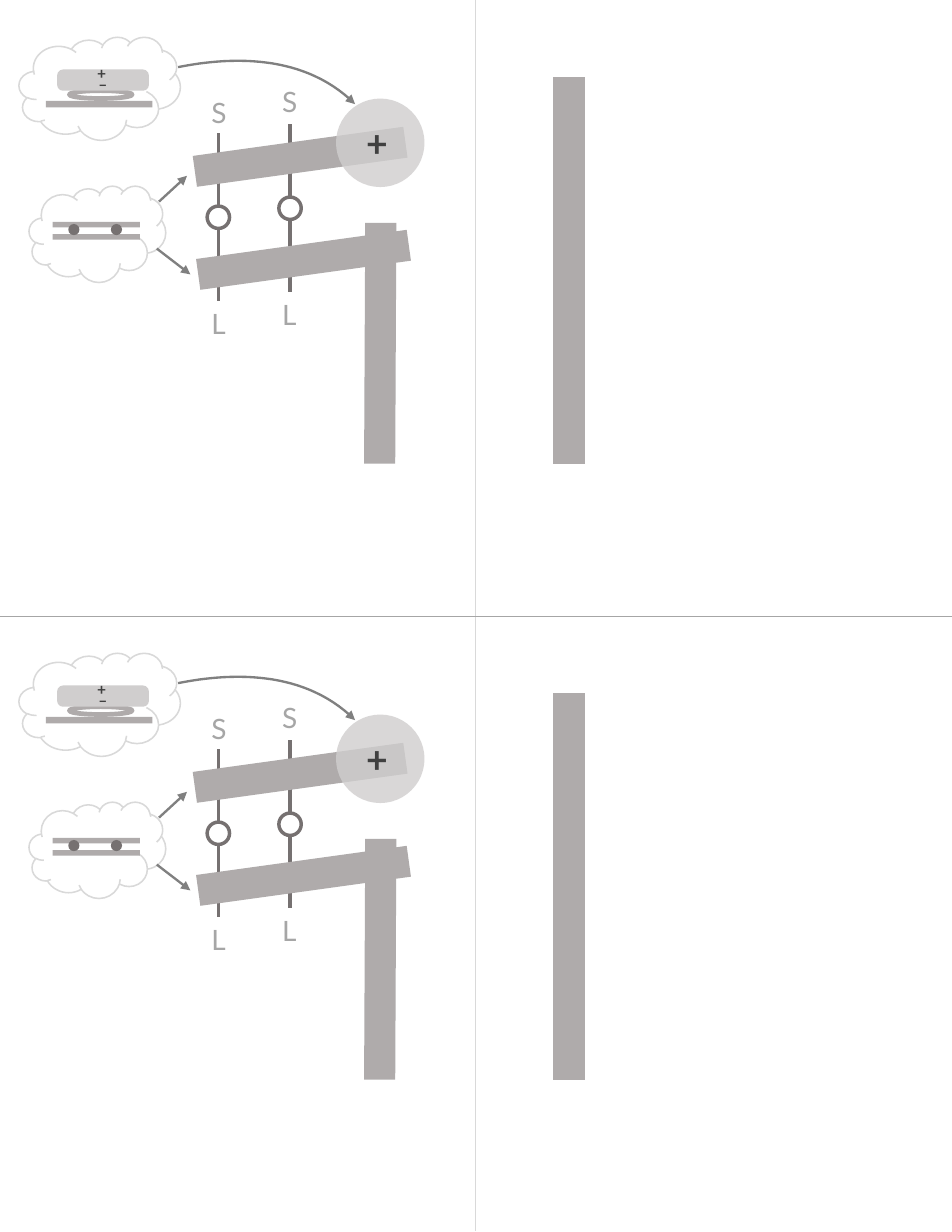
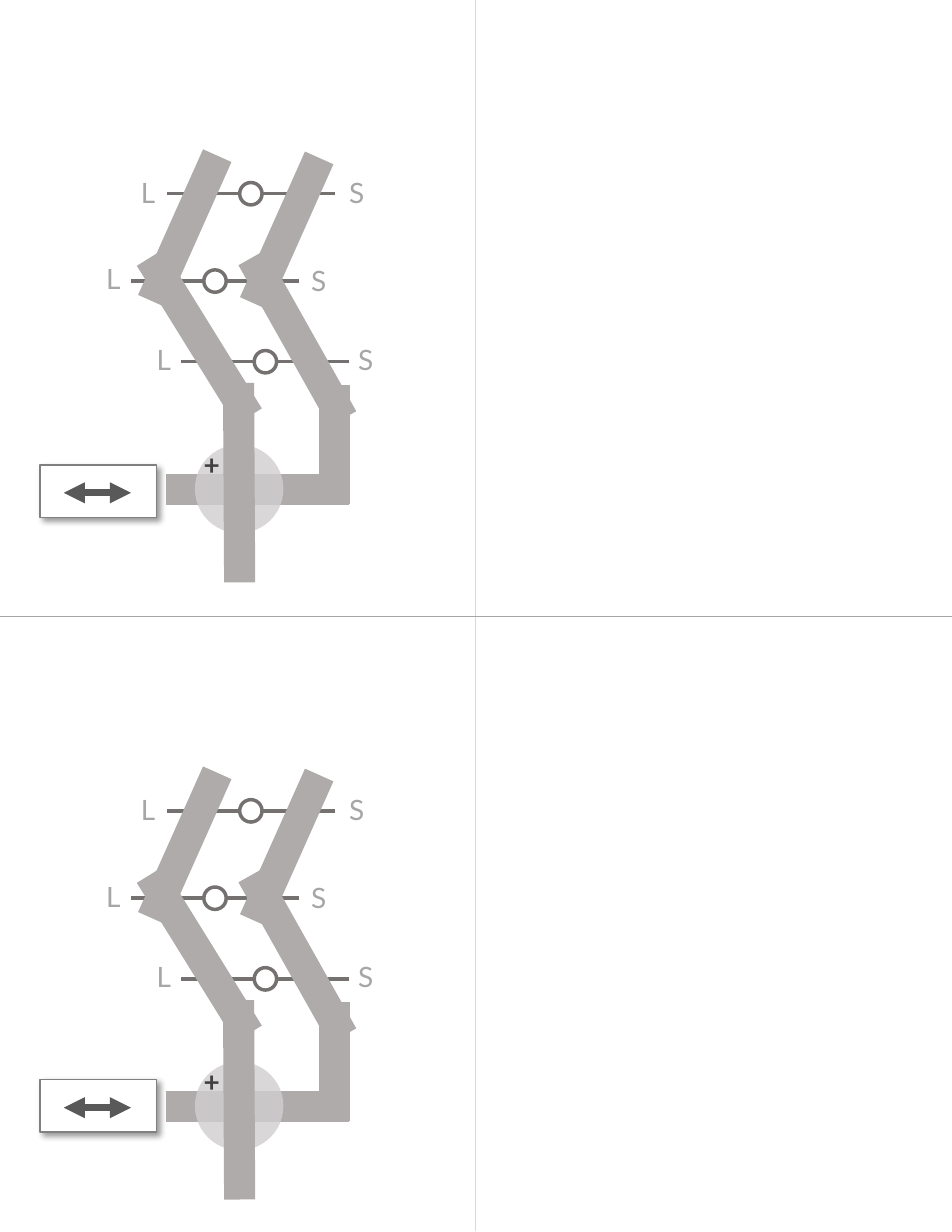
from lxml.etree import SubElement
from pptx import Presentation
from pptx.dml.color import RGBColor
from pptx.enum.shapes import MSO_CONNECTOR as Connector, MSO_SHAPE as Shape
from pptx.enum.text import MSO_AUTO_SIZE as AutoSize
from pptx.oxml.ns import qn
from pptx.util import Inches, Pt

COLORS = {
    "white": "FFFFFF", "black": "000000", "limb": "AFABAB", "joint": "D0CECE",
    "band": "767171", "outline": "D9D9D9", "label": "A6A6A6",
    "arrow": "808080", "sign": "404040", "motion": "595959",
}
FONT = "Lato"
LINE = Connector.STRAIGHT
LIMB = {"line": "limb", "width": 20}
BAND = {"line": "band", "width": 2.25}
JOINT_SIZE, RING_SIZE, PANEL_HEIGHT = 0.79, 0.2, 5.5


def draw(page, kind, at, drop=0, fill=None, opacity=100, line=None, width=1,
         arrows=(), shadow=False):
    """Draw a preset shape, a connector, or an open path if kind is None."""
    if kind is None:
        points = [(Inches(x), Inches(y + drop)) for x, y in at]
        builder = page.shapes.build_freeform(*points[0], scale=1.0)
        builder.add_line_segments(points[1:], close=False)
        item = builder.convert_to_shape()
    elif kind is LINE:
        x1, y1, x2, y2 = at
        item = page.shapes.add_connector(
            kind, Inches(x1), Inches(y1 + drop), Inches(x2), Inches(y2 + drop))
    else:
        left, top, wide, high = at
        item = page.shapes.add_shape(
            kind, Inches(left), Inches(top + drop), Inches(wide), Inches(high))
    properties = item._element.spPr

    if kind is not LINE:
        if fill:
            item.fill.solid()
            item.fill.fore_color.rgb = RGBColor.from_string(COLORS[fill])
            if opacity < 100:
                color = properties.find(qn("a:solidFill"))[0]
                SubElement(color, qn("a:alpha"), val=str(opacity * 1000))
        else:
            item.fill.background()

    if line:
        item.line.color.rgb = RGBColor.from_string(COLORS[line])
        item.line.width = Pt(width)
        for end in arrows:
            SubElement(item.line._get_or_add_ln(), qn(f"a:{end}"), type="triangle")
    else:
        item.line.fill.background()

    effects = SubElement(properties, qn("a:effectLst"))
    if shadow:
        outer = SubElement(effects, qn("a:outerShdw"), blurRad=str(Pt(4)),
                           dist=str(Pt(3)), dir=str(45 * 60000),
                           algn="tl", rotWithShape="0")
        color = SubElement(outer, qn("a:srgbClr"), val=COLORS["black"])
        SubElement(color, qn("a:alpha"), val="40000")
    return item


def write_text(page, text, left, top, width=0.34, height=0.4, size=18,
               color="label", bold=False):
    box = page.shapes.add_textbox(
        Inches(left), Inches(top), Inches(width), Inches(height))
    box.text_frame.word_wrap = False
    box.text_frame.auto_size = AutoSize.SHAPE_TO_FIT_TEXT
    span = box.text_frame.paragraphs[0].add_run()
    span.text = text
    span.font.name = FONT
    span.font.size = Pt(size)
    span.font.bold = bold
    span.font.color.rgb = RGBColor.from_string(COLORS[color])


deck = Presentation()
deck.slide_width, deck.slide_height = Inches(8.5), Inches(11)
arm_page, leg_page = [deck.slides.add_slide(deck.slide_layouts[6]) for _ in range(2)]

# Four-panel grid shared by both slides
for page in (arm_page, leg_page):
    grid = page.shapes.add_table(2, 2, 0, 0, Inches(8.49), Inches(11)).table
    grid.first_row = grid.horz_banding = False
    for row in range(2):
        grid.rows[row].height = Inches(PANEL_HEIGHT)
        for column in range(2):
            cell = grid.cell(row, column)
            borders = [("lnL" if column else "lnR", "outline", 0.25),
                       ("lnT" if row else "lnB", "label", 0.5)]
            for side, color, width in borders:
                edge = SubElement(cell._tc.get_or_add_tcPr(), qn(f"a:{side}"),
                                  w=str(Pt(width)))
                ink = SubElement(edge, qn("a:solidFill"))
                SubElement(ink, qn("a:srgbClr"), val=COLORS[color])
            cell.fill.background()

# Slide 1: the arm, once in each row
for drop in (0, PANEL_HEIGHT):
    page = arm_page
    draw(page, Shape.CLOUD, (0.26, 1.66, 1.22, 0.86), drop, fill="white", line="outline")

    # Bands with a ring at the middle
    for x, top in ((1.95, 1.19), (2.59, 1.11)):
        draw(page, LINE, (x, top, x, top + 1.5), drop, **BAND)
        draw(page, Shape.OVAL, (x - 0.1, top + 0.65, RING_SIZE, RING_SIZE), drop,
             fill="white", **BAND)

    # Limbs and joint
    for limb in ((3.4, 1.99, 3.39, 4.14), (1.74, 1.53, 3.62, 1.27)):
        draw(page, LINE, limb, drop, **LIMB)
    draw(page, Shape.OVAL, (3, 0.88, JOINT_SIZE, JOINT_SIZE), drop,
         fill="joint", opacity=80)
    write_text(page, "+", 3.17, 1.02 + drop, 0.44, 0.5, size=24, color="sign", bold=True)
    for limb in ((1.77, 2.45, 3.65, 2.19), (5.08, 0.69, 5.08, 4.14)):
        draw(page, LINE, limb, drop, **LIMB)

    # Band labels
    for text, left, top in (("S", 1.79, 0.8), ("S", 2.42, 0.71),
                            ("L", 1.79, 2.69), ("L", 2.42, 2.61)):
        write_text(page, text, left, top + drop)

    # Lower cloud: arrows and side view of the bands
    for arrow in ((1.42, 1.8, 1.67, 1.57), (1.4, 2.22, 1.7, 2.45)):
        draw(page, LINE, arrow, drop, line="arrow", width=1.5, arrows=["tailEnd"])
    for top in (1.98, 2.09):
        draw(page, Shape.RECTANGLE, (0.47, top, 0.78, 0.05), drop, fill="limb")
    for left in (0.61, 0.99):
        draw(page, Shape.OVAL, (left, 2, 0.1, 0.1), drop, fill="band")

    # Upper cloud: side view of the joint
    draw(page, Shape.CLOUD, (0.17, 0.33, 1.44, 0.92), drop, fill="white", line="outline")
    draw(page, Shape.RECTANGLE, (0.41, 0.9, 0.95, 0.06), drop, fill="limb")
    draw(page, Shape.OVAL, (0.62, 0.81, 0.56, 0.07), drop, line="limb", width=3)
    magnet = draw(page, Shape.ROUNDED_RECTANGLE, (0.51, 0.62, 0.82, 0.19), drop,
                  fill="joint")
    magnet.adjustments[0] = 0.28
    for text, left, top, width in (("–", 0.78, 0.62, 0.27), ("+", 0.77, 0.52, 0.3)):
        write_text(page, text, left, top + drop, width, 0.27, size=10,
                   color="sign", bold=True)

    # Curved arrow, sampled from a cubic curve
    controls = ((1.59, 0.6), (2.04, 0.51), (2.71, 0.47), (3.17, 0.93))
    curve = []
    for step in range(31):
        t = step / 30
        weights = ((1 - t) ** 3, 3 * t * (1 - t) ** 2, 3 * t * t * (1 - t), t ** 3)
        curve.append([sum(weight * point[axis] for weight, point in zip(weights, controls))
                      for axis in range(2)])
    draw(page, None, curve, drop, line="arrow", width=1.5, arrows=["tailEnd"])

# Slide 2: the legs, once in each row
for drop in (0, PANEL_HEIGHT + 0.01):
    page = leg_page

    # Bands with a ring at the middle
    for left, y in ((1.49, 1.73), (1.17, 2.51), (1.62, 3.23)):
        draw(page, LINE, (left + 1.5, y, left, y), drop, **BAND)
        draw(page, Shape.OVAL, (left + 0.65, y - 0.1, RING_SIZE, RING_SIZE), drop,
             fill="white", **BAND)

    # Limbs and joint
    for limb in ((2.85, 1.41, 2.27, 2.71), (1.94, 1.39, 1.36, 2.69),
                 (2.22, 3.72, 1.34, 2.3), (3.06, 3.74, 2.25, 2.3),
                 (2.99, 3.44, 2.99, 4.5), (1.48, 4.37, 3.12, 4.37)):
        draw(page, LINE, limb, drop, **LIMB)
    draw(page, Shape.OVAL, (1.74, 3.97, JOINT_SIZE, JOINT_SIZE), drop,
         fill="joint", opacity=80)
    draw(page, LINE, (2.13, 3.42, 2.14, 5.2), drop, **LIMB)
    write_text(page, "+", 1.72, 3.95 + drop, 0.38, color="sign", bold=True)

    # Band labels
    for text, left, top in (("S", 3.02, 1.52), ("L", 1.16, 1.52), ("L", 0.85, 2.29),
                            ("L", 1.3, 3.01), ("S", 2.68, 2.3), ("S", 3.1, 3.01)):
        write_text(page, text, left, top + drop)

# Motion buttons beside the legs
for top in (4.15, 9.64):
    draw(leg_page, Shape.RECTANGLE, (0.36, top, 1.04, 0.47), fill="white",
         line="arrow", shadow=True)
    draw(leg_page, LINE, (0.57, top + 0.25, 1.17, top + 0.25), line="motion",
         width=4.5, arrows=["headEnd", "tailEnd"])

deck.save("out.pptx")
